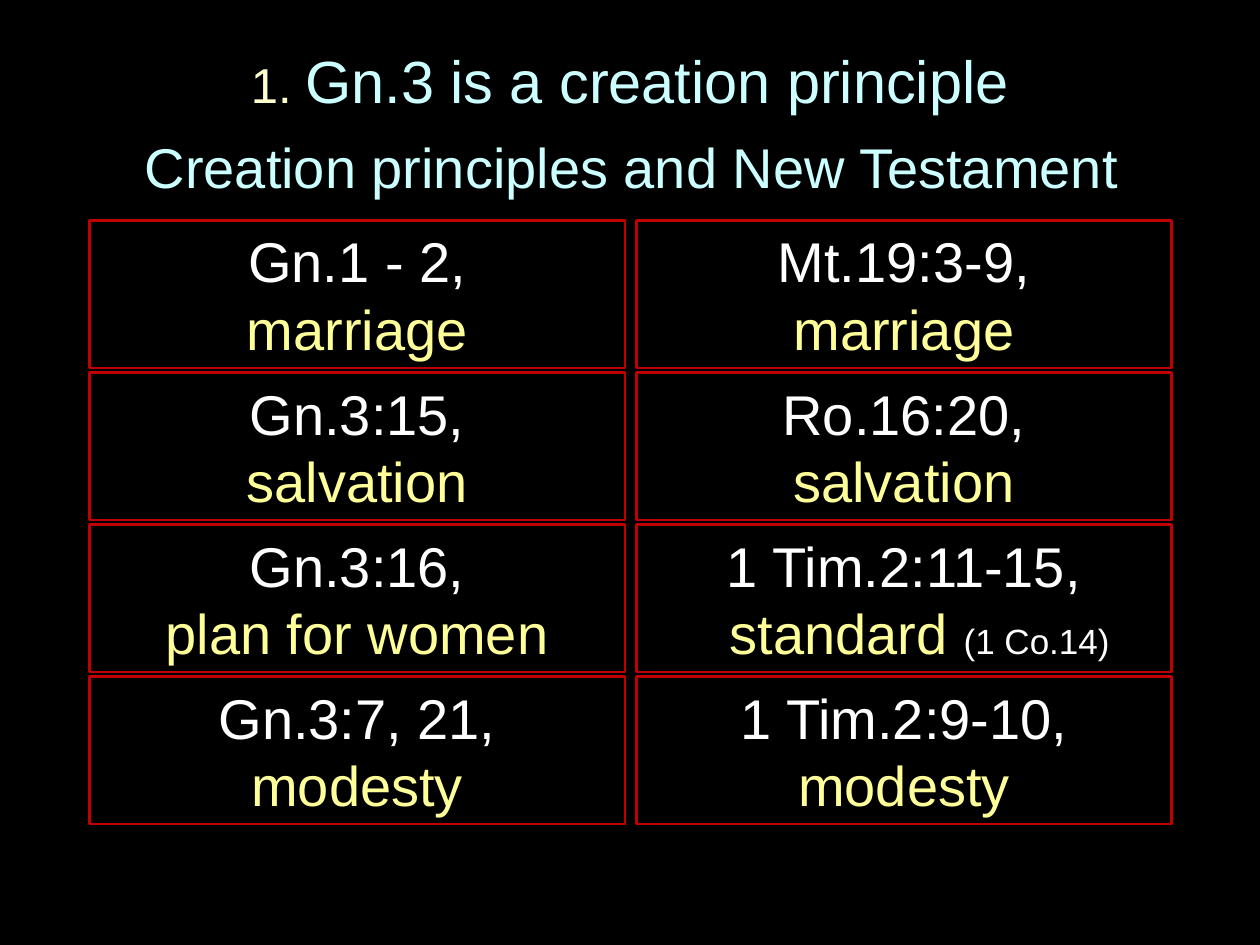
from pptx import Presentation
from pptx.dml.color import RGBColor
from pptx.enum.shapes import MSO_SHAPE
from pptx.enum.text import MSO_ANCHOR, PP_ALIGN
from pptx.util import Inches, Pt

RECT = MSO_SHAPE.RECTANGLE
MIDDLE, TOP = MSO_ANCHOR.MIDDLE, MSO_ANCHOR.TOP
CENTER = PP_ALIGN.CENTER

THEME = {
    "font": "Arial",
    "back": "000000", "edge": "C00000", "verse": "FFFFFF",
    "topic": "FFFF99", "head": "CCFFFF", "count": "FFFFCC",
    "title": 34, "text": 32, "number": 28, "note": 20,
}


def tint(name):
    return RGBColor.from_string(THEME[name])


def write(para, *parts):
    """Fill a centred paragraph with (text, size, colour) runs."""
    para.alignment = CENTER
    for text, size, color in parts:
        run = para.add_run()
        run.text = text
        run.font.name = THEME["font"]
        run.font.size = Pt(THEME[size])
        run.font.color.rgb = tint(color)


deck = Presentation()
deck.slide_width, deck.slide_height = Inches(10), Inches(7.5)
slide = deck.slides.add_slide(deck.slide_layouts[5])
slide.background.fill.solid()
slide.background.fill.fore_color.rgb = tint("back")

# Title and subtitle
title = slide.shapes.title
title.left, title.top = Inches(0.5), Inches(0.17)
title.width, title.height = Inches(9), Inches(0.92)
title.text_frame.vertical_anchor = MIDDLE
write(title.text_frame.paragraphs[0],
      ("1. ", "number", "count"),
      ("Gn.3 is a creation principle", "title", "head"))

lead = slide.shapes.add_textbox(
    Inches(0.41), Inches(1), Inches(9.21), Inches(6.02)).text_frame
lead.word_wrap = True
lead.vertical_anchor = TOP
write(lead.paragraphs[0],
      ("Creation principles and New Testament", "text", "head"))

# Grid of verse pairs: Genesis on the left, New Testament on the right
LEFT, HEAD = 0.71, 1.75
WIDE, HIGH = 4.25, 1.17
STEP_X, STEP_Y = 4.34, 1.207
PAIRS = [
    [("Gn.1 - 2,", "marriage"), ("Mt.19:3-9,", "marriage")],
    [("Gn.3:15,", "salvation"), ("Ro.16:20,", "salvation")],
    [("Gn.3:16,", "plan for women"),
     ("1 Tim.2:11-15,", "standard ", "(1 Co.14)")],
    [("Gn.3:7, 21,", "modesty"), ("1 Tim.2:9-10,", "modesty")],
]

for row, pair in enumerate(PAIRS):
    for col, (verse, topic, *notes) in enumerate(pair):
        box = slide.shapes.add_shape(
            RECT, Inches(LEFT + col * STEP_X), Inches(HEAD + row * STEP_Y),
            Inches(WIDE), Inches(HIGH))
        box.shadow.inherit = False
        box.fill.solid()
        box.fill.fore_color.rgb = tint("back")
        box.line.color.rgb = tint("edge")
        box.line.width = Pt(1.5)
        frame = box.text_frame
        frame.word_wrap = True
        frame.vertical_anchor = MIDDLE
        write(frame.paragraphs[0], (verse, "text", "verse"))
        under = frame.add_paragraph()
        write(under, (topic, "text", "topic"),
              *[(note, "note", "verse") for note in notes])
        if notes:
            under._p.get_or_add_pPr().set("marL", str(Inches(0.25)))

deck.save("out.pptx")
